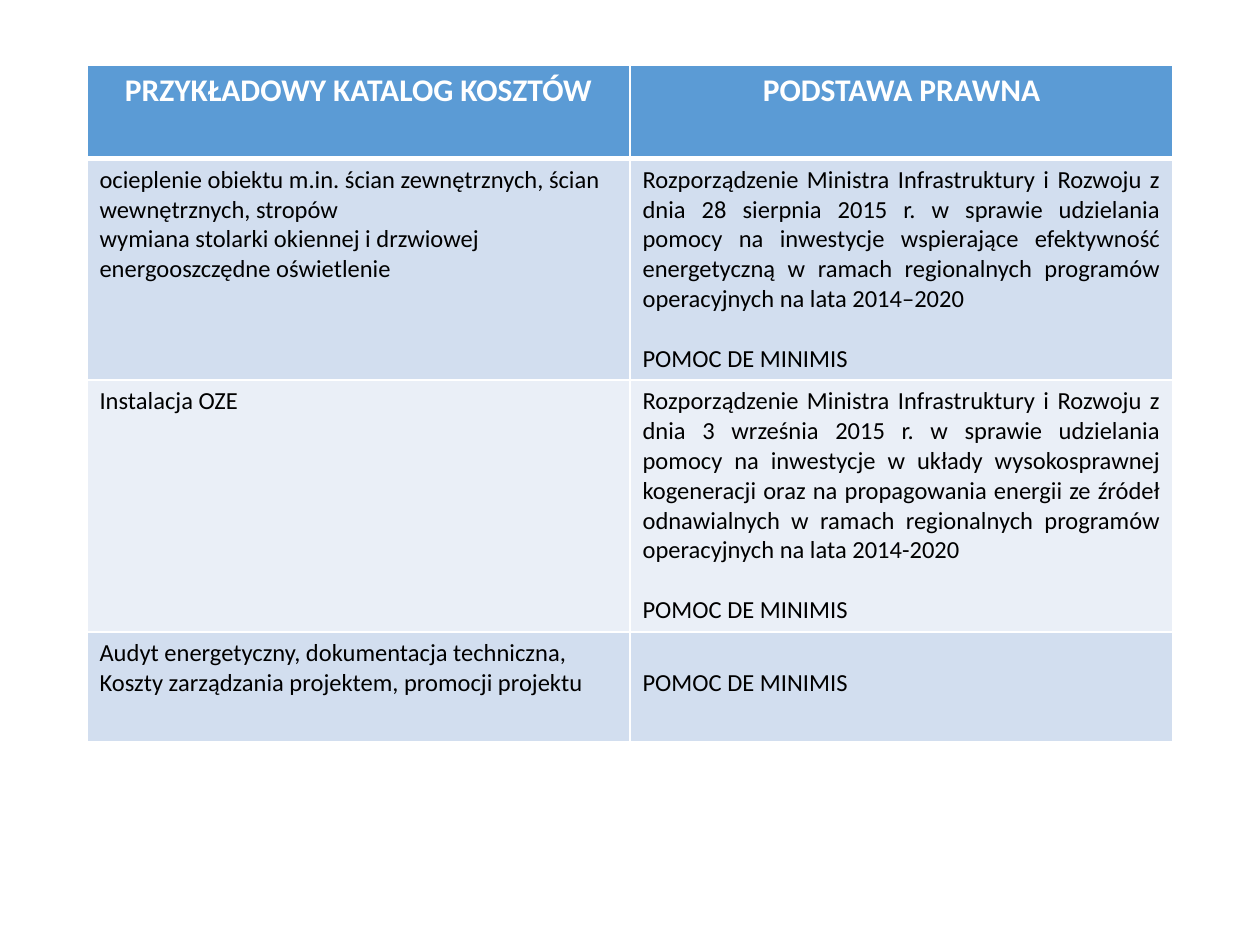
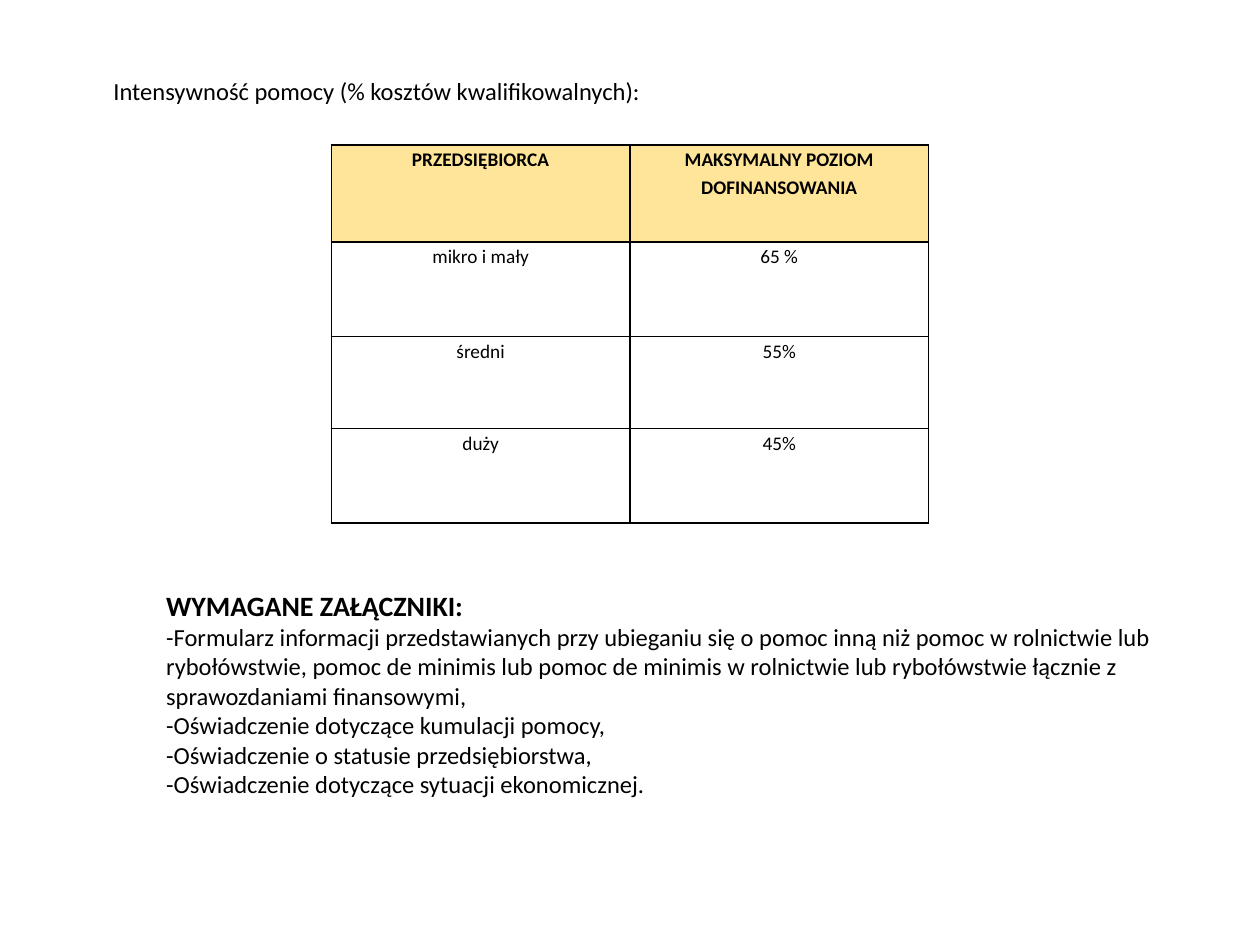
from pptx import Presentation
from pptx.util import Inches, Pt
from pptx.dml.color import RGBColor as Rgb
from pptx.enum.text import PP_ALIGN as Align
from pptx.oxml import parse_xml
from pptx.oxml.ns import nsdecls

FONT = "Calibri"
COLORS = {
    "white": "FFFFFF",
    "black": "000000",
    "blue": "5B9BD5",
    "mid": "D2DEEF",
    "pale": "EAEFF7",
    "gold": "FFE599",
}
LEFT, TOP, WIDE = 0.69, 0.52, 8.62
MINIMIS = "POMOC DE MINIMIS"
GAP = 17.1  # one empty 14 pt line

COSTS = [
    (["ocieplenie obiektu m.in. ścian zewnętrznych, ścian wewnętrznych, stropów",
      "wymiana stolarki okiennej i drzwiowej",
      "energooszczędne oświetlenie"],
     ["Rozporządzenie Ministra Infrastruktury i Rozwoju z dnia 28 sierpnia 2015 r. "
      "w sprawie udzielania pomocy na inwestycje wspierające efektywność energetyczną "
      "w ramach regionalnych programów operacyjnych na lata 2014–2020",
      MINIMIS]),
    (["Instalacja OZE"],
     ["Rozporządzenie Ministra Infrastruktury i Rozwoju z dnia 3 września 2015 r. "
      "w sprawie udzielania pomocy na inwestycje w układy wysokosprawnej kogeneracji "
      "oraz na propagowania energii ze źródeł odnawialnych w ramach regionalnych "
      "programów operacyjnych na lata 2014-2020",
      MINIMIS]),
    (["Audyt energetyczny, dokumentacja techniczna,",
      "Koszty zarządzania projektem, promocji projektu"],
     [MINIMIS]),
]
LEVELS = [
    ("PRZEDSIĘBIORCA", "MAKSYMALNY POZIOM DOFINANSOWANIA"),
    ("mikro i mały", "65 %"),
    ("średni", "55%"),
    ("duży", "45%"),
]
FILES = [
    "-Formularz informacji przedstawianych przy ubieganiu się o pomoc inną niż pomoc "
    "w rolnictwie lub rybołówstwie, pomoc de minimis lub pomoc de minimis w rolnictwie "
    "lub rybołówstwie łącznie z sprawozdaniami finansowymi,",
    "-Oświadczenie dotyczące kumulacji pomocy,",
    "-Oświadczenie o statusie przedsiębiorstwa,",
    "-Oświadczenie dotyczące sytuacji ekonomicznej.",
]


def add_par(frame, text, size=14, color="black", bold=False,
            align=Align.LEFT, before=0, after=0, line=None):
    """Fill the empty first paragraph, or append a new one."""
    par = frame.paragraphs[0]
    if par.runs:
        par = frame.add_paragraph()
    par.alignment = align
    par.space_before, par.space_after = Pt(before), Pt(after)
    if line:
        par.line_spacing = line
    run = par.add_run()
    run.text = text
    font = run.font
    font.name, font.size, font.bold = FONT, Pt(size), bold
    font.color.rgb = Rgb.from_string(COLORS[color])


def add_box(slide, left, top, wide, high):
    frame = slide.shapes.add_textbox(
        Inches(left), Inches(top), Inches(wide), Inches(high)).text_frame
    frame.word_wrap = True
    return frame


def add_grid(slide, left, top, wide, rows):
    """Add a two-column table with the given row heights."""
    table = slide.shapes.add_table(
        len(rows), 2, Inches(left), Inches(top),
        Inches(wide), Inches(sum(rows))).table
    for col in table.columns:
        col.width = Inches(wide / 2)
    for row, high in zip(table.rows, rows):
        row.height = Inches(high)
    return table


def style_cell(cell, fill, edge, top=1, low=1):
    """Draw the four borders, then the fill (None leaves it clear)."""
    props = cell._tc.get_or_add_tcPr()
    for side, width in (("L", 1), ("R", 1), ("T", top), ("B", low)):
        props.append(parse_xml(
            f'<a:ln{side} {nsdecls("a")} w="{Pt(width)}"><a:solidFill>'
            f'<a:srgbClr val="{COLORS[edge]}"/></a:solidFill></a:ln{side}>'))
    if fill:
        cell.fill.solid()
        cell.fill.fore_color.rgb = Rgb.from_string(COLORS[fill])
    else:
        cell.fill.background()


def draw_costs(slide):
    table = add_grid(slide, LEFT, TOP, WIDE, [0.74, 1.75, 2, 0.87])
    heads = ("PRZYKŁADOWY KATALOG KOSZTÓW", "PODSTAWA PRAWNA")
    for col, head in enumerate(heads):
        cell = table.cell(0, col)
        style_cell(cell, "blue", "white", low=3)
        add_par(cell.text_frame, head, 18, "white", True, Align.CENTER)
    for row, (items, laws) in enumerate(COSTS, 1):
        cost, law = table.cell(row, 0), table.cell(row, 1)
        for cell in (cost, law):
            style_cell(cell, "mid" if row % 2 else "pale", "white",
                       top=3 if row == 1 else 1)
        for item in items:
            add_par(cost.text_frame, item)
        for num, text in enumerate(laws):
            add_par(law.text_frame, text, align=Align.JUSTIFY,
                    before=GAP if num else 0)
        if len(laws) == 1:
            law.margin_top = Inches(0.05) + Pt(GAP)


def draw_levels(slide):
    table = add_grid(slide, 2.63, 1.15, 4.74, [0.77, 0.75, 0.73, 0.75])
    for row, texts in enumerate(LEVELS):
        for col, text in enumerate(texts):
            cell = table.cell(row, col)
            style_cell(cell, None if row else "gold", "black")
            cell.margin_left = cell.margin_right = Inches(0.07)
            cell.margin_top = cell.margin_bottom = 0
            add_par(cell.text_frame, text, 11, bold=row == 0,
                    align=Align.CENTER, after=10, line=1.15)


def draw_aid(slide):
    intro = add_box(slide, LEFT, TOP, WIDE, 6.23)
    intro.margin_left = Inches(0.21)
    add_par(intro, "Intensywność pomocy (% kosztów kwalifikowalnych):",
            align=Align.JUSTIFY, after=10, line=1.15)
    draw_levels(slide)
    needs = add_box(slide, 1.22, 4.62, 8.19, 2.02)
    add_par(needs, "WYMAGANE ZAŁĄCZNIKI:", 16, bold=True)
    for text in FILES:
        add_par(needs, text)


def main():
    deck = Presentation()
    deck.slide_width, deck.slide_height = Inches(10), Inches(7.5)
    for draw in (draw_costs, draw_aid):
        draw(deck.slides.add_slide(deck.slide_layouts[6]))
    deck.save("out.pptx")


if __name__ == "__main__":
    main()
